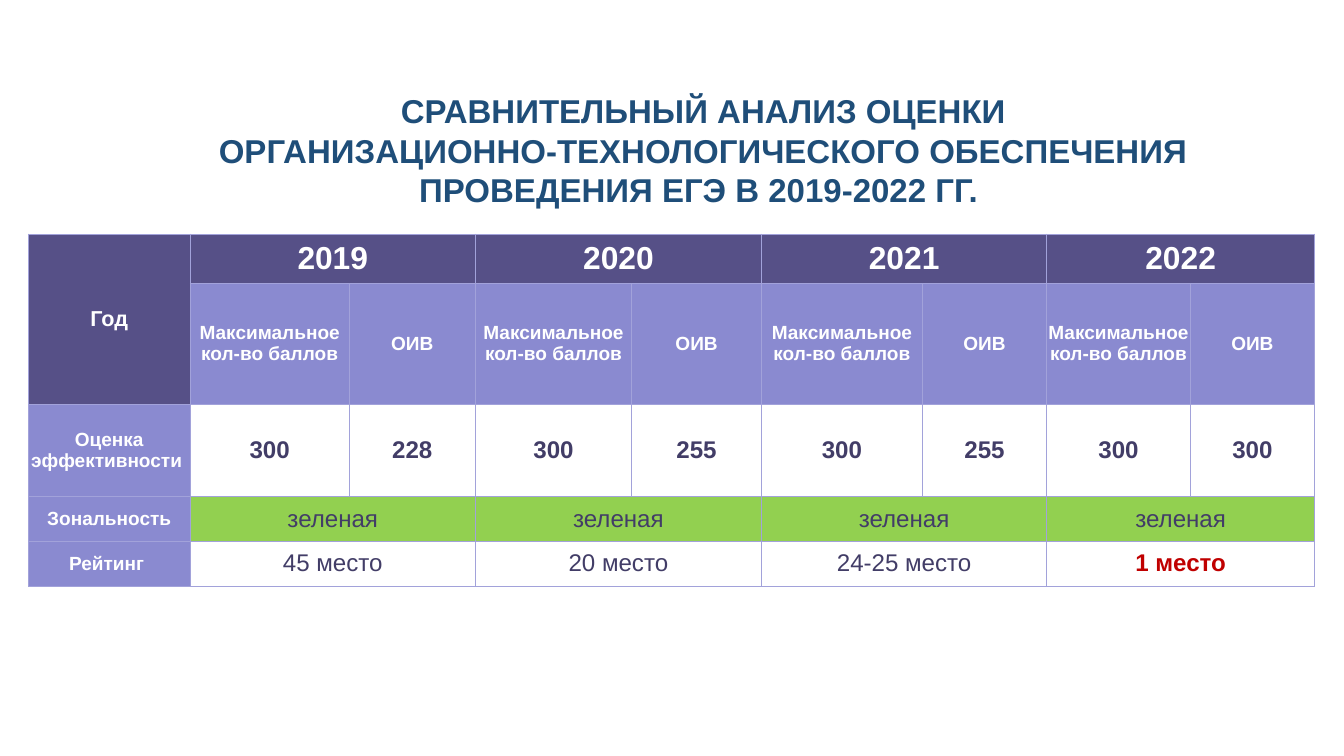
from dataclasses import dataclass

from lxml.etree import SubElement as Sub
from pptx import Presentation
from pptx.dml.color import RGBColor as RGB
from pptx.enum.text import MSO_ANCHOR as Anchor, MSO_AUTO_SIZE as Auto, PP_ALIGN as Align
from pptx.oxml.ns import qn
from pptx.util import Inches, Pt


@dataclass(frozen=True)
class Theme:
    font: str = "Arial"
    title: str = "1F4E79"
    dark: str = "565087"
    light: str = "8A8AD0"
    green: str = "92D050"
    line: str = "A2A2DA"
    white: str = "FFFFFF"
    ink: str = "423D67"
    red: str = "C00000"
    head: int = 26
    year: int = 25
    value: int = 19
    corner: int = 17
    label: int = 15


class Deck:
    def __init__(self, theme, wide, high):
        self.theme = theme
        self.file = Presentation()
        self.file.slide_width, self.file.slide_height = Inches(wide), Inches(high)
        self.slide = self.file.slides.add_slide(self.file.slide_layouts[6])

    def text(self, para, words, size, color, bold=True):
        para.alignment = Align.CENTER
        run = para.add_run()
        run.text = words
        font = run.font
        font.name, font.size, font.bold = self.theme.font, Pt(size), bold
        font.color.rgb = RGB.from_string(color)

    def title(self, box, lines):
        frame = self.slide.shapes.add_textbox(*map(Inches, box)).text_frame
        frame.word_wrap = True
        frame.auto_size = Auto.SHAPE_TO_FIT_TEXT
        frame.margin_left = frame.margin_right = Inches(0.11)
        for i, line in enumerate(lines):
            para = frame.add_paragraph() if i else frame.paragraphs[0]
            self.text(para, line, self.theme.head, self.theme.title)

    def table(self, left, top, cols, rows):
        box = map(Inches, (left, top, sum(cols), sum(rows)))
        grid = self.slide.shapes.add_table(len(rows), len(cols), *box).table
        grid.first_row = grid.horz_banding = False
        for col, wide in zip(grid.columns, cols):
            col.width = Inches(wide)
        for row, high in zip(grid.rows, rows):
            row.height = Inches(high)
        for cell in grid.iter_cells():
            self.border(cell)
            cell.fill.background()
        return grid

    def border(self, cell):
        props = cell._tc.get_or_add_tcPr()
        for side in ("lnL", "lnR", "lnT", "lnB"):
            line = Sub(props, qn(f"a:{side}"), w=str(Pt(0.5)))
            Sub(Sub(line, qn("a:solidFill")), qn("a:srgbClr"), val=self.theme.line)

    def cell(self, grid, row, col, words, size, color, fill=None, bold=True, span=(1, 1)):
        """Fill one cell; span counts the rows and columns it covers."""
        cell = grid.cell(row, col)
        if span != (1, 1):
            cell.merge(grid.cell(row + span[0] - 1, col + span[1] - 1))
        cell.margin_left = cell.margin_right = cell.margin_top = cell.margin_bottom = 0
        cell.vertical_anchor = Anchor.MIDDLE
        if fill:
            cell.fill.solid()
            cell.fill.fore_color.rgb = RGB.from_string(fill)
        self.text(cell.text_frame.paragraphs[0], words, size, color, bold)


YEARS = [
    ("2019", "300", "228", "45 место"),
    ("2020", "300", "255", "20 место"),
    ("2021", "300", "255", "24-25 место"),
    ("2022", "300", "300", "1 место"),
]
LABELS = ["Оценка эффективности ", "Зональность", "Рейтинг "]
HEADS = ["Максимальное кол-во баллов", "ОИВ"]


def main():
    look = Theme()
    deck = Deck(look, 14.7, 8.27)
    deck.title((1.64, 0.94, 12.11, 1.42), [
        "СРАВНИТЕЛЬНЫЙ АНАЛИЗ ОЦЕНКИ",
        "ОРГАНИЗАЦИОННО-ТЕХНОЛОГИЧЕСКОГО ОБЕСПЕЧЕНИЯ ПРОВЕДЕНИЯ ЕГЭ В 2019-2022 ГГ. ",
    ])
    grid = deck.table(0.31, 2.56,
                      [1.77, 1.74, 1.38, 1.71, 1.42, 1.76, 1.36, 1.57, 1.36],
                      [0.54, 1.32, 1.01, 0.49, 0.49])

    deck.cell(grid, 0, 0, "Год", look.corner, look.white, look.dark, span=(2, 1))
    for row, label in enumerate(LABELS, 2):
        deck.cell(grid, row, 0, label, look.label, look.white, look.light)

    pair = (1, 2)
    for i, (year, top, score, place) in enumerate(YEARS):
        col = 1 + 2 * i
        best = place == "1 место"
        deck.cell(grid, 0, col, year, look.year, look.white, look.dark, span=pair)
        for j, (head, value) in enumerate(zip(HEADS, (top, score))):
            deck.cell(grid, 1, col + j, head, look.label, look.white, look.light)
            deck.cell(grid, 2, col + j, value, look.value, look.ink)
        deck.cell(grid, 3, col, "зеленая", look.value, look.ink, look.green, False, pair)
        deck.cell(grid, 4, col, place, look.value, look.red if best else look.ink,
                  bold=best, span=pair)

    deck.file.save("out.pptx")


if __name__ == "__main__":
    main()
